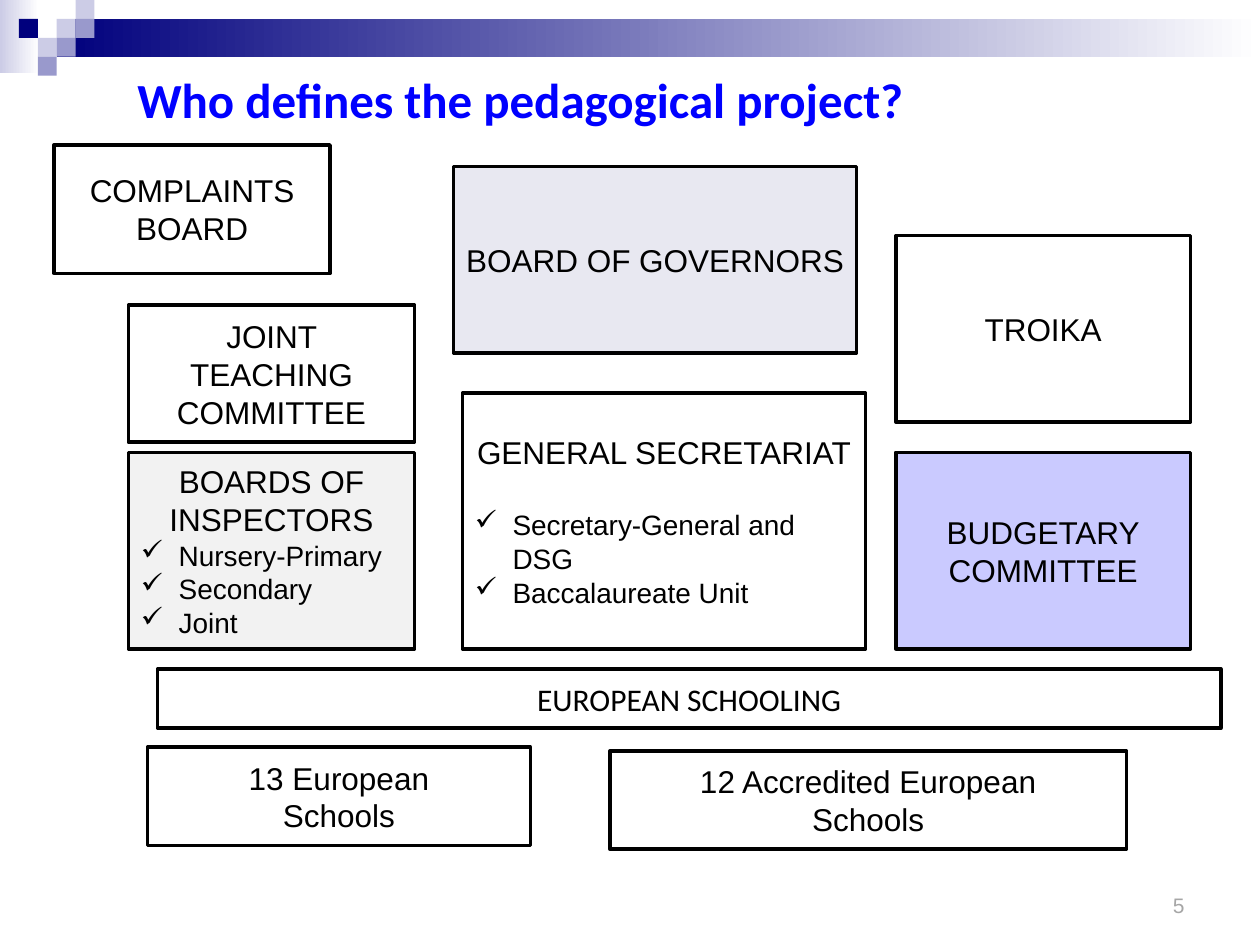
from pptx import Presentation
from pptx.dml.color import RGBColor
from pptx.enum.shapes import MSO_SHAPE
from pptx.enum.text import MSO_ANCHOR, PP_ALIGN
from pptx.oxml.xmlchemy import OxmlElement
from pptx.util import Inches, Pt


def color(code):
    return RGBColor.from_string(code)


class Deck:
    font = "Arial"
    size = 18
    ink = "000000"

    def __init__(self):
        self.prs = Presentation()
        self.prs.slide_width, self.prs.slide_height = Inches(10), Inches(7.5)
        self.slide = self.prs.slides.add_slide(self.prs.slide_layouts[5])

    def label(self, para, text, size=None, font=None, ink=None,
              align=PP_ALIGN.CENTER, bold=False):
        para.text = text
        para.alignment = align
        para.font.size = Pt(size or self.size)
        para.font.name = font or self.font
        para.font.color.rgb = color(ink or self.ink)
        para.font.bold = bold

    def title(self, text, *at):
        shape = self.slide.shapes.title
        shape.left, shape.top, shape.width, shape.height = map(Inches, at)
        shape.text_frame.vertical_anchor = MSO_ANCHOR.MIDDLE
        self.label(shape.text_frame.paragraphs[0], text, 28, "Calibri",
                   "0000FF", PP_ALIGN.JUSTIFY, True)

    def rect(self, at, fill):
        shape = self.slide.shapes.add_shape(MSO_SHAPE.RECTANGLE, *map(Inches, at))
        shape.shadow.inherit = False
        shape.fill.solid()
        shape.fill.fore_color.rgb = color(fill)
        shape.line.fill.background()
        return shape

    def fade(self, at, start):
        fill = self.rect(at, start).fill
        fill.gradient()
        fill.gradient_angle = 0
        for stop, code in zip(fill.gradient_stops, (start, "FFFFFF")):
            stop.color.rgb = color(code)

    def bullet(self, para):
        props = para._p.get_or_add_pPr()
        props.set("marL", str(Inches(0.3)))
        props.set("indent", str(-Inches(0.3)))
        mark = OxmlElement("a:buChar")
        mark.set("char", "✓")
        props.insert_element_before(mark, "a:tabLst", "a:defRPr", "a:extLst")

    def box(self, at, heads, items=(), fill="FFFFFF", font=None, inset=0.1, gap=0):
        shape = self.rect(at, fill)
        shape.line.color.rgb = color(self.ink)
        shape.line.width = Pt(2)
        frame = shape.text_frame
        frame.word_wrap = True
        frame.vertical_anchor = MSO_ANCHOR.MIDDLE
        frame.margin_left = frame.margin_right = Inches(inset)
        for i, text in enumerate([*heads, *items]):
            para = frame.add_paragraph() if i else frame.paragraphs[0]
            if i < len(heads):
                self.label(para, text, font=font)
                para.space_after = Pt(gap)
            else:
                self.label(para, text, 16, align=PP_ALIGN.LEFT)
                self.bullet(para)

    def number(self, text, *at):
        frame = self.slide.shapes.add_textbox(*map(Inches, at)).text_frame
        frame.word_wrap = True
        frame.vertical_anchor = MSO_ANCHOR.BOTTOM
        self.label(frame.paragraphs[0], text, 12, ink="A6A6A6",
                   align=PP_ALIGN.RIGHT)


def main():
    deck = Deck()

    # Header band and its mosaic of squares
    navy, pale, mid = "00007D", "CCCCE6", "9999CC"
    deck.fade((0, 0, 0.31, 0.58), pale)
    deck.fade((0.45, 0.15, 9.55, 0.3), navy)
    side = 0.15
    for col, row, fill in [(3, 1, pale), (4, 0, pale), (4, 1, mid), (2, 2, pale),
                           (1, 1, navy), (3, 2, mid), (2, 3, mid)]:
        deck.rect((col * side, row * side, side, side), fill)

    deck.title("Who defines the pedagogical project?", 0.99, 0.43, 9.06, 0.71)

    # Governing bodies
    deck.box((3.6, 1.32, 3.2, 1.48), ["BOARD OF GOVERNORS"], fill="E8E8F1",
             inset=0.05)
    deck.box((7.11, 1.87, 2.34, 1.48), ["TROIKA"])
    deck.box((7.11, 3.59, 2.34, 1.56), ["BUDGETARY", "COMMITTEE"], fill="CACAFF")
    deck.box((3.67, 3.12, 3.2, 2.03), ["GENERAL SECRETARIAT"],
             ["Secretary-General and DSG", "Baccalaureate Unit"], gap=21)
    deck.box((0.43, 1.15, 2.19, 1.02), ["COMPLAINTS BOARD"])
    deck.box((1.02, 2.42, 2.27, 1.09), ["JOINT TEACHING COMMITTEE"], inset=0.15)
    deck.box((1.02, 3.59, 2.27, 1.56), ["BOARDS OF INSPECTORS"],
             ["Nursery-Primary", "Secondary", "Joint"], fill="F2F2F2")

    # Schools
    deck.box((1.25, 5.31, 8.44, 0.47), ["EUROPEAN SCHOOLING"], font="Calibri")
    deck.box((1.17, 5.93, 3.04, 0.78), ["13 European", "Schools"])
    deck.box((4.84, 5.96, 4.1, 0.78), ["12 Accredited European", "Schools"])

    # Slide number
    deck.number("5", 7.17, 6.83, 2.33, 0.5)
    deck.prs.save("out.pptx")


if __name__ == "__main__":
    main()
